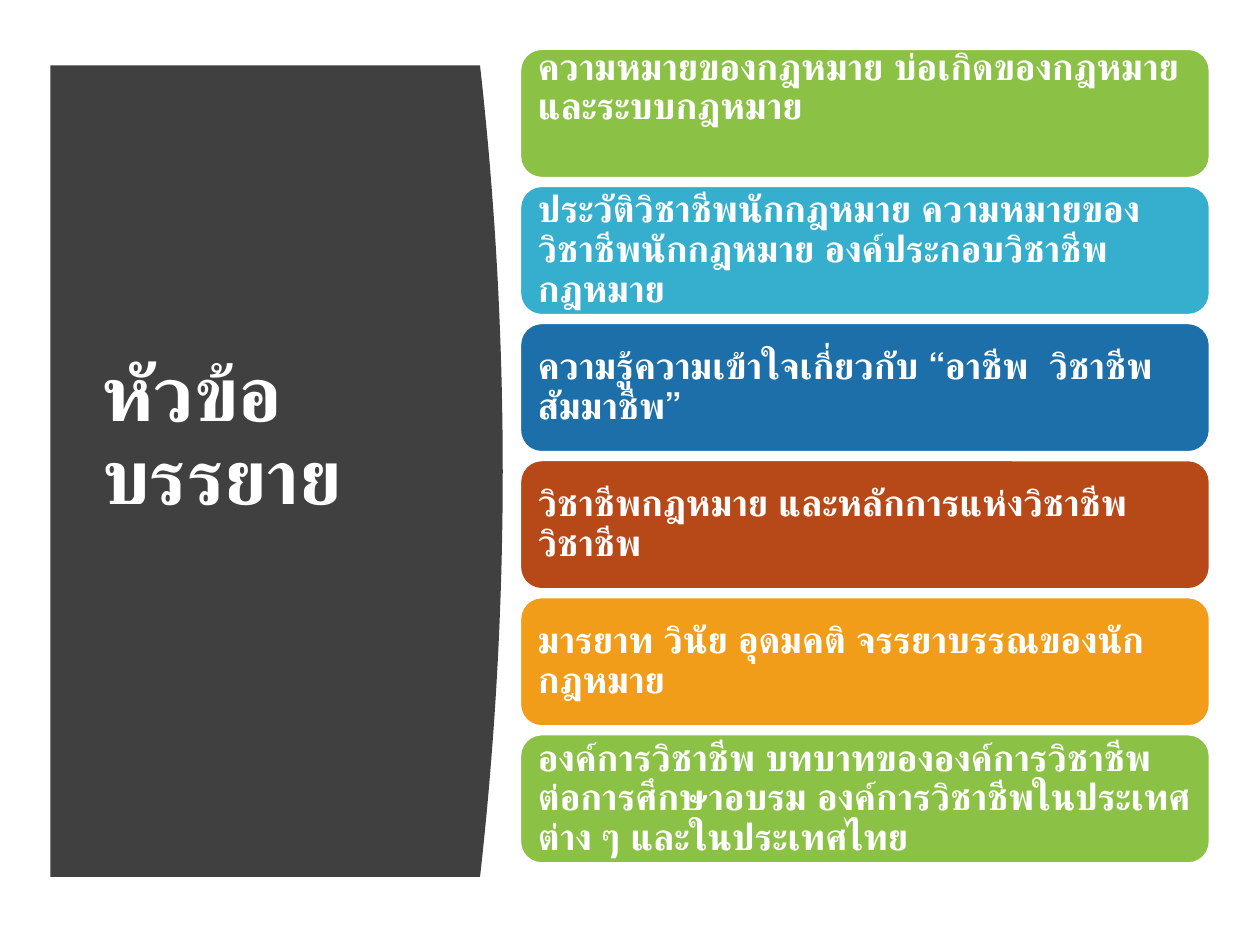
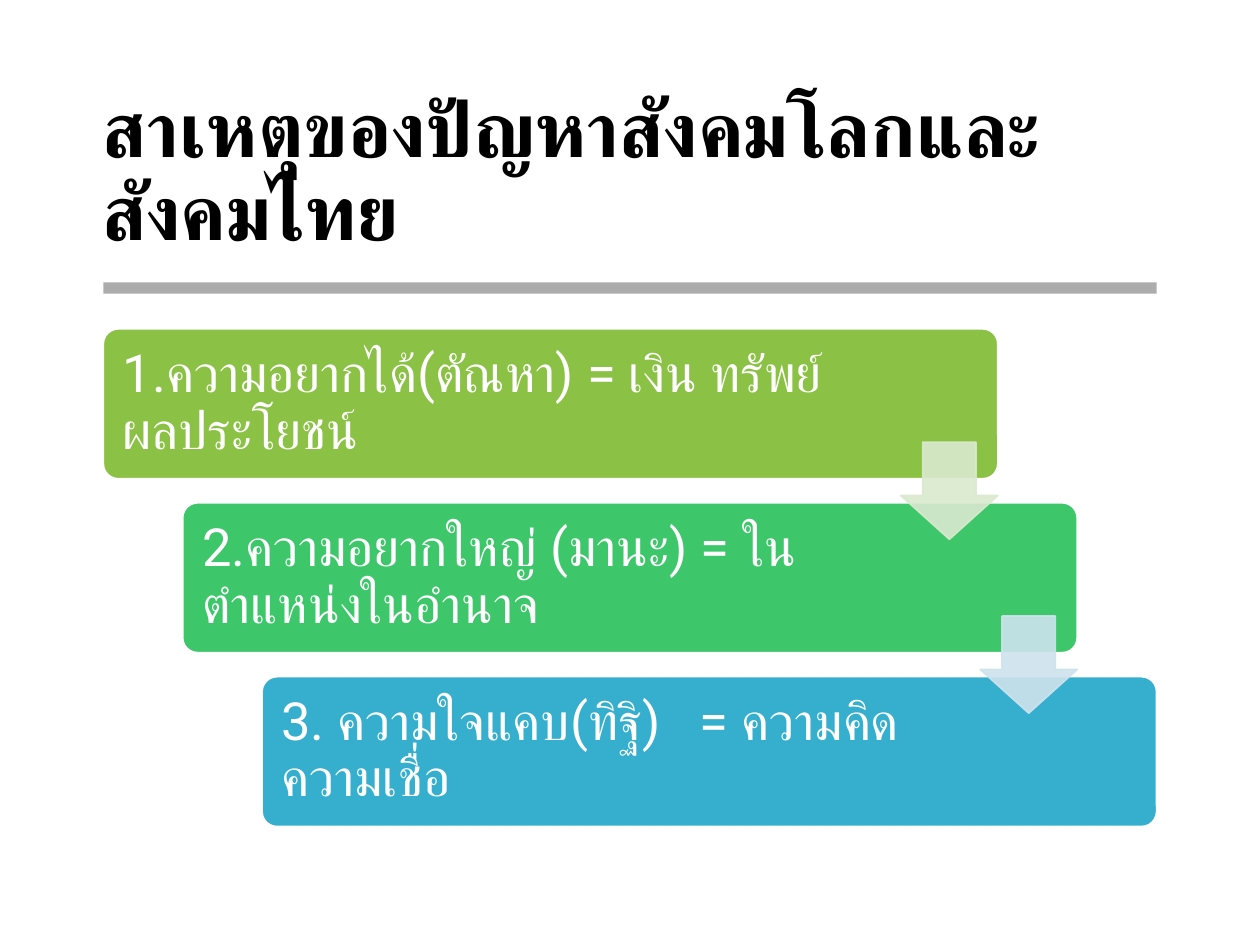
from lxml import etree
from pptx import Presentation
from pptx import util as u
from pptx.dml.color import RGBColor
from pptx.enum import lang, shapes, text
from pptx.oxml import ns

FONT = "Roboto"
WHITE, BLACK, CHARCOAL, GREY = "FFFFFF", "000000", "404040", "808080"
LIME, GREEN, SKY, BLUE = "8BC145", "3EC76A", "36AFCE", "1D6FA9"
RUST, AMBER = "B74919", "F19D19"
PALE_GREEN, PALE_BLUE = "DAE9CF", "CEE3ED"


def rgb(value):
    """Turn a hex string into a colour."""
    return RGBColor.from_string(value)


class Deck:
    """Hold the shared style and the current slide."""

    def __init__(self):
        """Start an empty 10 by 7.5 inch presentation."""
        self.prs = Presentation()
        self.prs.slide_width, self.prs.slide_height = u.Inches(10), u.Inches(7.5)
        self.s = None

    def slide(self, title, box, color):
        """Add a title-only slide and format its title."""
        self.s = self.prs.slides.add_slide(self.prs.slide_layouts[5])
        sp = self.s.shapes.title
        sp.left, sp.top, sp.width, sp.height = map(u.Inches, box)
        self.label(sp, title, 44, color, True)

    def label(self, sp, words, size, color, bold=False):
        """Put one left-aligned paragraph in a shape."""
        tf = sp.text_frame
        tf.text = words
        tf.word_wrap = True
        tf.auto_size = text.MSO_AUTO_SIZE.NONE
        tf.vertical_anchor = text.MSO_ANCHOR.MIDDLE
        p = tf.paragraphs[0]
        p.alignment = text.PP_ALIGN.LEFT
        p.line_spacing = 0.9
        f = p.font
        f.name, f.size, f.bold = FONT, u.Pt(size), bold
        f.language_id = lang.MSO_LANGUAGE_ID.THAI
        f.color.rgb = rgb(color)

    def paint(self, sp, fill, line=None, alpha=100):
        """Set fill, outline and opacity without a shadow."""
        sp.shadow.inherit = False
        sp.fill.solid()
        sp.fill.fore_color.rgb = rgb(fill)
        if line:
            sp.line.color.rgb = rgb(line)
            sp.line.width = u.Pt(1)
        else:
            sp.line.fill.background()
        if alpha < 100:
            for clr in sp.element.spPr.iter(ns.qn("a:srgbClr")):
                etree.SubElement(clr, ns.qn("a:alpha"), val=str(alpha * 1000))

    def shape(self, kind, box, fill, line=None, alpha=100, adj=()):
        """Add a painted preset shape."""
        sp = self.s.shapes.add_shape(kind, *map(u.Inches, box))
        for i, value in enumerate(adj):
            sp.adjustments[i] = value
        self.paint(sp, fill, line, alpha)
        return sp

    def card(self, box, fill, words, size, inset, right=None, bottom=None,
             bold=False, adj=()):
        """Add a rounded card holding white text."""
        sp = self.shape(shapes.MSO_SHAPE.ROUNDED_RECTANGLE, box, fill, WHITE, adj=adj)
        self.label(sp, words, size, WHITE, bold)
        tf = sp.text_frame
        tf.margin_left = tf.margin_top = u.Inches(inset)
        tf.margin_right = u.Inches(right or inset)
        tf.margin_bottom = u.Inches(bottom or inset)

    def curved_panel(self, left, top, edge, bottom, bulge, fill, steps=40):
        """Add a panel with a parabolic right edge behind the title."""
        points = []
        for i in range(steps + 1):
            t = 2 * i / steps - 1
            points.append((u.Inches(edge + bulge * (1 - t * t)),
                           u.Inches(top + (bottom - top) * i / steps)))
        fb = self.s.shapes.build_freeform(u.Inches(left), u.Inches(top))
        fb.add_line_segments(points + [(u.Inches(left), u.Inches(bottom))], close=True)
        sp = fb.convert_to_shape()
        self.paint(sp, fill)
        self.s.shapes.title.element.addprevious(sp.element)


def topics_slide(deck):
    """Build the list of lecture topics."""
    deck.slide("หัวข้อบรรยาย", (0.71, 0.6, 2.8, 5.75), WHITE)
    deck.curved_panel(0.4, 0.52, 3.81, 6.96, 0.18, CHARCOAL)
    topics = [
        (LIME, "ความหมายของกฎหมาย บ่อเกิดของกฎหมาย และระบบกฎหมาย"),
        (SKY, "ประวัติวิชาชีพนักกฎหมาย ความหมายของวิชาชีพนักกฎหมาย องค์ประกอบวิชาชีพกฎหมาย"),
        (BLUE, "ความรู้ความเข้าใจเกี่ยวกับ “อาชีพ  วิชาชีพ  สัมมาชีพ”"),
        (RUST, "วิชาชีพกฎหมาย และหลักการแห่งวิชาชีพวิชาชีพ"),
        (AMBER, "มารยาท วินัย อุดมคติ จรรยาบรรณของนักกฎหมาย"),
        (LIME, "องค์การวิชาชีพ บทบาทขององค์การวิชาชีพต่อการศึกษาอบรม "
               "องค์การวิชาชีพในประเทศต่าง ๆ และในประเทศไทย"),
    ]
    pitch = (5.83 - 0.39) / (len(topics) - 1)
    for i, (fill, words) in enumerate(topics):
        deck.card((4.13, 0.39 + pitch * i, 5.47, 1.02), fill, words, 21, 0.09,
                  bottom=0.49 if i == 0 else None, bold=True)


def causes_slide(deck):
    """Build the staircase of causes."""
    deck.slide("สาเหตุของปัญหาสังคมโลกและสังคมไทย", (0.71, 0.66, 8.57, 1.45), BLACK)
    deck.shape(shapes.MSO_SHAPE.RECTANGLE, (0.82, 2.24, 8.36, 0.09), GREY, alpha=65)
    causes = [
        (LIME, 1.32, "1.ความอยากได้(ตัณหา) = เงิน ทรัพย์ ผลประโยชน์"),
        (GREEN, 1.51, "2.ความอยากใหญ่ (มานะ) = ในตำแหน่งในอำนาจ"),
        (SKY, 1.51, "3. ความใจแคบ(ทิฐิ)   = ความคิดความเชื่อ"),
    ]
    step_x, step_y = 0.63, 1.38
    for i, (fill, right, words) in enumerate(causes):
        deck.card((0.82 + step_x * i, 2.61 + step_y * i, 7.1, 1.19), fill, words,
                  30, 0.12, right=right, adj=[0.1])
    for i, tint in enumerate((PALE_GREEN, PALE_BLUE)):
        deck.shape(shapes.MSO_SHAPE.DOWN_ARROW,
                   (7.15 + step_x * i, 3.51 + step_y * i, 0.77, 0.77),
                   tint, tint, 90, adj=(0.55, 0.45))


def main():
    """Build and save the slides."""
    deck = Deck()
    topics_slide(deck)
    causes_slide(deck)
    deck.prs.save("out.pptx")


if __name__ == "__main__":
    main()
